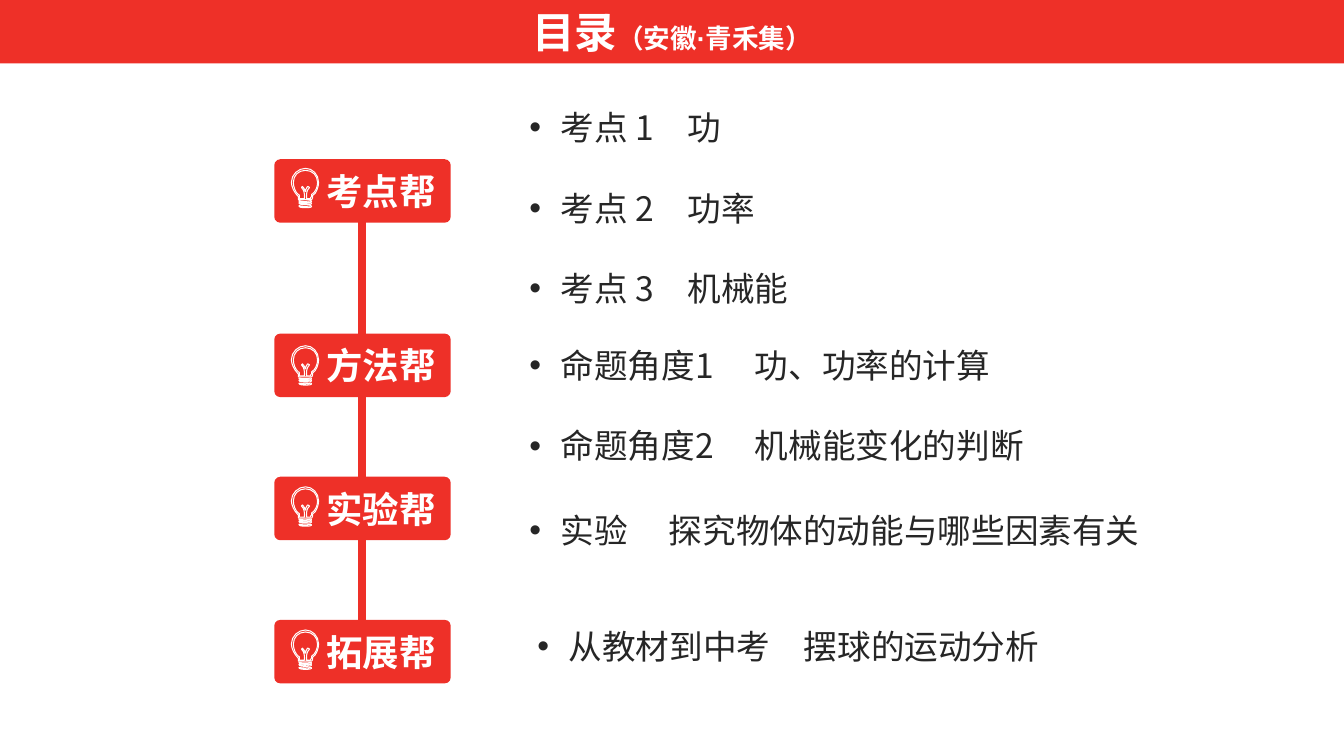
from lxml import etree
from pptx import Presentation
from pptx.dml.color import RGBColor
from pptx.enum.shapes import MSO_CONNECTOR, MSO_SHAPE
from pptx.enum.text import MSO_ANCHOR, MSO_AUTO_SIZE, PP_ALIGN
from pptx.oxml.ns import qn
from pptx.util import Pt

PX = 9144
RED = RGBColor(0xEE, 0x30, 0x28)
WHITE = RGBColor(0xFF, 0xFF, 0xFF)
INK = RGBColor(0x26, 0x26, 0x26)
LATIN_FONT = "Arial"
LIST_FONT = "Noto Sans CJK SC"
STRAIGHT = MSO_CONNECTOR.STRAIGHT
ROUNDED = MSO_SHAPE.ROUNDED_RECTANGLE
MIDDLE, TOP = MSO_ANCHOR.MIDDLE, MSO_ANCHOR.TOP
CENTER, LEFT, RIGHT = PP_ALIGN.CENTER, PP_ALIGN.LEFT, PP_ALIGN.RIGHT
FIXED, GROW = MSO_AUTO_SIZE.NONE, MSO_AUTO_SIZE.SHAPE_TO_FIT_TEXT
COMPARISON_LAYOUT = 4
CURVE_STEPS = 4

BADGES = [
    ("考点帮", 158, 167),
    ("方法帮", 331, 343),
    ("实验帮", 473, 483),
    ("拓展帮", 615, 625),
]
LISTS = [
    ((515, 61, 713, 252), 2.0, ["考点 1　功", "考点 2　功率", "考点 3　机械能"]),
    ((515, 297, 713, 172), 2.0, ["命题角度1 　功、功率的计算", "命题角度2 　机械能变化的判断"]),
    ((523, 608, 720, 58), 1.2, ["从教材到中考　摆球的运动分析"]),
    ((515, 469, 713, 83), 1.8, ["实验 　探究物体的动能与哪些因素有关"]),
]

GLASS = [
    (14, 0), (21, 0), (27, 6), (27, 14), (27, 18), (25, 25), (21, 27),
    (21, 27), (21, 28), (21, 29), (21, 30), (20, 31), (20, 31),
    (19, 31), (16, 31), (14, 31), (12, 31), (9, 31), (7, 31),
    (7, 30), (7, 30), (7, 28), (7, 28), (6, 27), (6, 27),
    (3, 24), (0, 18), (0, 14), (0, 6), (7, 0), (14, 0),
]
FILAMENT = [
    (14, 2), (7, 2), (2, 7), (2, 14), (2, 18), (4, 24), (7, 26),
    (8, 26), (8, 27), (8, 28), (8, 29), (8, 29), (8, 30),
    (9, 30), (11, 30), (13, 30), (13, 30), (13, 29), (13, 29),
    (13, 25), (13, 22), (10, 19), (10, 19), (11, 18), (11, 18),
    (13, 20), (13, 21), (14, 23), (14, 21), (15, 20), (16, 18),
    (17, 18), (18, 19), (18, 19), (15, 22), (15, 25), (15, 29),
    (15, 30), (15, 30), (15, 30), (17, 30), (19, 30), (19, 30),
    (19, 29), (19, 29), (20, 28), (20, 27), (20, 26), (20, 26),
    (24, 24), (26, 18), (26, 14), (26, 7), (21, 2), (14, 2),
]
RING = [
    (8, 37), (10, 38), (17, 38), (19, 37), (20, 37), (20, 38), (20, 38),
    (19, 39), (17, 39), (14, 39), (12, 39), (9, 39), (8, 38),
    (7, 37), (8, 37), (8, 37),
]
RING_RISES = (0, 3, 5)


def px(*lengths):
    return [round(length * PX) for length in lengths]


def place(box, frame):
    box.left, box.top, box.width, box.height = px(*frame)


def paint(box, color):
    box.fill.solid()
    box.fill.fore_color.rgb = color


def add_span(para, text, size, color, font, bold):
    span = para.add_run()
    span.text = text
    span.font.size = Pt(size)
    span.font.color.rgb = color
    span.font.name = font
    span.font.bold = bold
    return span


def fill_header(title):
    place(title, (0, 0, 1333, 63))
    paint(title, RED)
    frame = title.text_frame
    frame.auto_size = FIXED
    frame.vertical_anchor = MIDDLE
    para = frame.paragraphs[0]
    para.alignment = CENTER
    add_span(para, "目录", 30.4, WHITE, LATIN_FONT, True)
    add_span(para, "（安徽·青禾集）", 19, WHITE, LATIN_FONT, True)


def add_bullet(para):
    props = para._p.get_or_add_pPr()
    props.set("marL", str(31 * PX))
    props.set("indent", str(-31 * PX))
    etree.SubElement(props, qn("a:buChar")).set("char", "•")


def fill_list(box, frame, spacing, items):
    place(box, frame)
    body = box.text_frame
    body.auto_size = GROW
    body.vertical_anchor = TOP
    for index, item in enumerate(items):
        para = body.add_paragraph() if index else body.paragraphs[0]
        para.alignment = LEFT
        para.line_spacing = spacing
        para.space_before = Pt(0)
        add_bullet(para)
        span = add_span(para, item, 24, INK, LIST_FONT, False)
        etree.SubElement(span._r.rPr, qn("a:ea")).set("typeface", LIST_FONT)


def add_spine(page):
    spine = page.shapes.add_connector(STRAIGHT, *px(359, 211, 359, 615))
    spine.line.color.rgb = RED
    spine.line.width = Pt(6)
    etree.SubElement(spine._element.spPr, qn("a:effectLst"))


def add_badge(page, label, top):
    badge = page.shapes.add_shape(ROUNDED, *px(272, top, 175, 63))
    badge.adjustments[0] = 0.095
    badge.shadow.inherit = False
    paint(badge, RED)
    badge.line.fill.background()
    frame = badge.text_frame
    frame.word_wrap = True
    frame.vertical_anchor = MIDDLE
    frame.margin_left, frame.margin_top, frame.margin_right, frame.margin_bottom = px(10, 5, 13, 5)
    para = frame.paragraphs[0]
    para.alignment = RIGHT
    add_span(para, label, 26, WHITE, LATIN_FONT, True)


def trace(curve):
    points = [curve[0]]
    for start in range(0, len(curve) - 1, 3):
        controls = curve[start:start + 4]
        for step in range(1, CURVE_STEPS + 1):
            t = step / CURVE_STEPS
            weights = ((1 - t) ** 3, 3 * t * (1 - t) ** 2, 3 * t * t * (1 - t), t ** 3)
            points.append(tuple(
                sum(w * point[axis] for w, point in zip(weights, controls)) for axis in (0, 1)
            ))
    return [px(*point) for point in points]


def add_bulb(page, top):
    rings = [[(x, y - rise) for x, y in RING] for rise in RING_RISES]
    outlines = [trace(curve) for curve in (*rings, FILAMENT, GLASS)]
    builder = page.shapes.build_freeform(*outlines[0][0])
    for index, outline in enumerate(outlines):
        if index:
            builder.move_to(*outline[0])
        builder.add_line_segments(outline[1:], close=True)
    bulb = builder.convert_to_shape(*px(289, top))
    bulb.shadow.inherit = False
    paint(bulb, RED)
    bulb.line.color.rgb = WHITE
    bulb.line.width = Pt(0.75)


def main():
    deck = Presentation()
    deck.slide_width, deck.slide_height = px(1333, 750)
    page = deck.slides.add_slide(deck.slide_layouts[COMPARISON_LAYOUT])
    title, *bodies = page.placeholders
    fill_header(title)
    for box, (frame, spacing, items) in zip(bodies, LISTS):
        fill_list(box, frame, spacing, items)
    add_spine(page)
    for label, badge_top, bulb_top in BADGES:
        add_badge(page, label, badge_top)
        add_bulb(page, bulb_top)
    deck.save("out.pptx")


if __name__ == "__main__":
    main()
